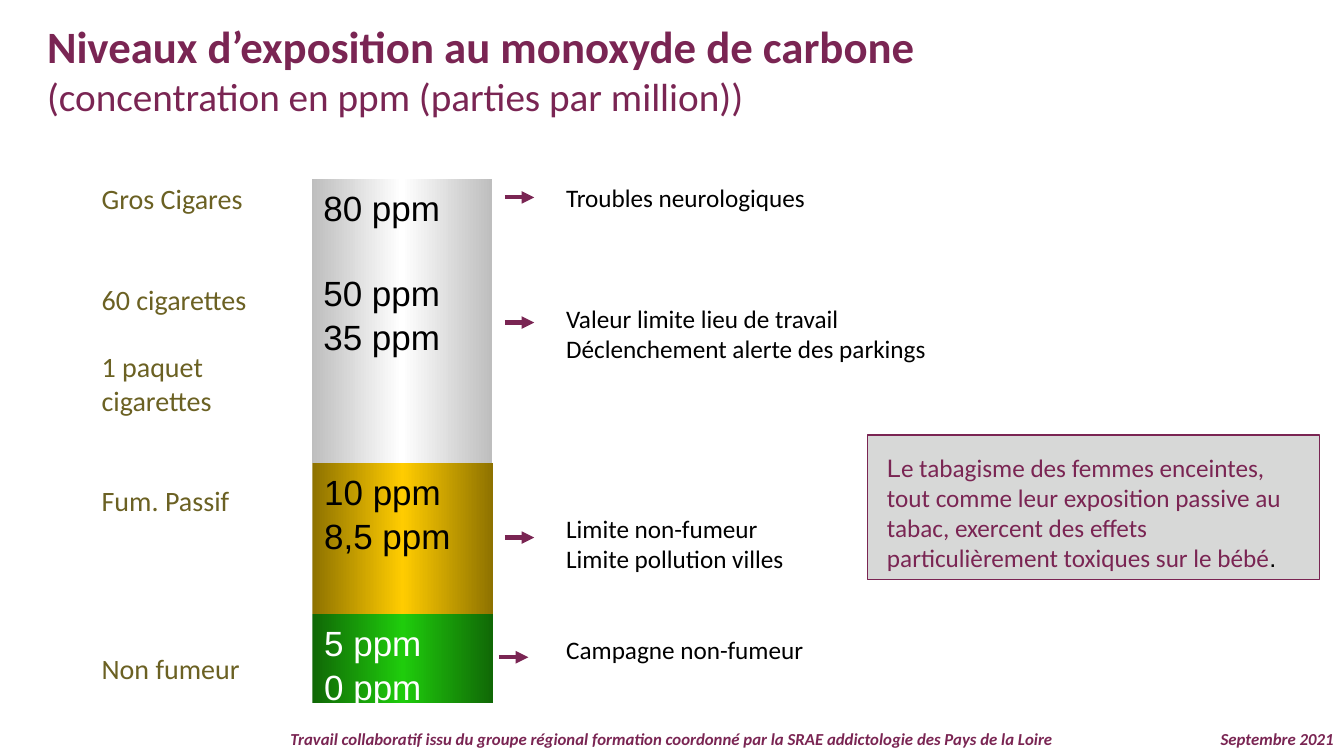
from copy import deepcopy

from lxml.etree import SubElement
from pptx import Presentation
from pptx.dml.color import RGBColor
from pptx.enum.shapes import MSO_CONNECTOR, MSO_SHAPE
from pptx.enum.text import MSO_ANCHOR, MSO_AUTO_SIZE, PP_ALIGN
from pptx.oxml.ns import qn
from pptx.util import Inches, Pt

COLUMNS, ROWS = 160, 90
BLANK_LINE = 1.2  # height of a skipped line, in font sizes


def cells(count):
    """Turn a number of grid cells (twelve to the inch) into a length."""
    return Inches(count / 12)


def rgb(colour):
    return RGBColor.from_string(colour)


def format_run(run, size, colour, font="Calibri", bold=False, italic=False):
    run.font.size, run.font.name = Pt(size), font
    run.font.bold, run.font.italic = bold, italic
    run.font.color.rgb = rgb(colour)


def write(frame, paragraphs, align=PP_ALIGN.LEFT, spacing=1.0,
          insets=(1.2, 0.6, 1.2, 0.6), plain_list=False, **style):
    """Fill a frame with (skipped lines, [(text, style changes), ...]) paragraphs."""
    frame.word_wrap, frame.auto_size = True, MSO_AUTO_SIZE.NONE
    frame.vertical_anchor = MSO_ANCHOR.TOP
    (frame.margin_left, frame.margin_top,
     frame.margin_right, frame.margin_bottom) = map(cells, insets)
    for index, (skipped, runs) in enumerate(paragraphs):
        paragraph = frame.add_paragraph() if index else frame.paragraphs[0]
        if plain_list:
            properties = paragraph._p.get_or_add_pPr()
            properties.set("marL", "0")
            properties.set("indent", "0")
            SubElement(properties, qn("a:buNone"))
        paragraph.alignment, paragraph.line_spacing = align, spacing
        paragraph.space_before = Pt(skipped * style["size"] * BLANK_LINE)
        for text, changes in runs:
            run = paragraph.add_run()
            run.text = text
            format_run(run, **{**style, **changes})


def lines(*entries):
    """Make paragraphs from texts, or from (skipped lines, text) pairs."""
    pairs = [(0, entry) if isinstance(entry, str) else entry for entry in entries]
    return [(skipped, [(text, {})]) for skipped, text in pairs]


class ExposureSlide:
    plum, olive, black, white = "7A2553", "6B6123", "000000", "FFFFFF"
    note_grey = "D7D8D7"

    def __init__(self, deck):
        self.slide = deck.slides.add_slide(deck.slide_layouts[1])
        self.shapes = self.slide.shapes

    def placeholder(self, index, left, top, width, height, paragraphs, **style):
        holder = self.slide.placeholders[index]
        holder.left, holder.top = cells(left), cells(top)
        holder.width, holder.height = cells(width), cells(height)
        write(holder.text_frame, paragraphs, **style)

    def text(self, left, top, width, height, paragraphs, **style):
        box = self.shapes.add_textbox(*map(cells, (left, top, width, height)))
        write(box.text_frame, paragraphs, **style)

    def rectangle(self, left, top, width, height, paragraphs, **style):
        box = self.shapes.add_shape(
            MSO_SHAPE.RECTANGLE, *map(cells, (left, top, width, height)))
        box.shadow.inherit = False
        write(box.text_frame, paragraphs, **style)
        return box

    def level(self, left, top, height, edge, middle, paragraphs, colour):
        bar = self.rectangle(left, top, 21.5, height, paragraphs, size=25, font="Arial",
                             colour=colour, spacing=1.04, insets=(1.4, 0.7, 1.4, 0.7))
        bar.line.fill.background()
        bar.fill.gradient()
        bar.fill.gradient_angle = 0
        stops = bar.element.spPr.find(".//" + qn("a:gsLst"))
        stops.append(deepcopy(stops[0]))
        for stop, shade, position in zip(
                bar.fill.gradient_stops, (edge, middle, edge), (0, 0.5, 1)):
            stop.color.rgb, stop.position = rgb(shade), position

    def note(self, left, top, width, height, paragraphs, **style):
        box = self.rectangle(left, top, width, height, paragraphs, **style)
        box.fill.solid()
        box.fill.fore_color.rgb = rgb(self.note_grey)
        box.line.color.rgb, box.line.width = rgb(self.plum), Pt(1)

    def arrow(self, left, top, length=3.5):
        arrow = self.shapes.add_connector(
            MSO_CONNECTOR.STRAIGHT, *map(cells, (left, top, left + length, top)))
        arrow.line.color.rgb, arrow.line.width = rgb(self.plum), Pt(3)
        SubElement(arrow.line._get_or_add_ln(), qn("a:tailEnd"), type="triangle")
        SubElement(arrow.element.spPr, qn("a:effectLst"))


def main():
    deck = Presentation()
    deck.slide_width, deck.slide_height = cells(COLUMNS), cells(ROWS)
    page = ExposureSlide(deck)

    page.placeholder(0, 4.4, 1.6, 128, 13.3, [
        (0, [("Niveaux d’exposition au monoxyde de carbone", {"bold": True})]),
        (0, [("(concentration en ppm (parties par million))", {"size": 28})]),
    ], size=32, colour=page.plum)

    page.placeholder(1, 10.9, 21, 23.5, 61.8, lines(
        "Gros Cigares", (2, "60 cigarettes"), (1, "1 paquet cigarettes"),
        (2, "Fum. Passif"), (4, "Non fumeur"),
    ), size=20, colour=page.olive, plain_list=True)

    level_top = 21.25
    for left, height, edge, middle, colour, values in (
        (37.1, 33.85, "BEBEBE", "FFFFFF", page.black, ("80 ppm", (1, "50 ppm"), "35 ppm")),
        (37.2, 18, "8E7200", "FFCC00", page.black, ("10 ppm", "8,5 ppm")),
        (37.2, 10.55, "106806", "1FCC0C", page.white, ("5 ppm", "0 ppm")),
    ):
        page.level(left, level_top, height, edge, middle, lines(*values), colour)
        level_top += height

    for left, top in ((60.1, 23.5), (60.1, 38.4), (60.1, 64), (59.4, 78.25)):
        page.arrow(left, top)

    page.text(66.2, 21.1, 48.4, 23, lines(
        "Troubles neurologiques", (3, "Valeur limite lieu de travail"),
        "Déclenchement alerte des parkings",
    ), size=18, colour=page.black)
    page.text(66.2, 60.5, 31.6, 19.4, lines(
        "Limite non-fumeur", "Limite pollution villes", (2, "Campagne non-fumeur"),
    ), size=18, colour=page.black)

    page.note(103.3, 51.8, 53.8, 17.2, [(0, [
        ("L", {"font": "Arial"}),
        ("e tabagisme des femmes enceintes, tout comme leur exposition passive au tabac, "
         "exercent des effets particulièrement toxiques sur le bébé", {}),
        (".", {"font": "Arial", "colour": page.black}),
    ])], size=18, colour=page.plum, insets=(2.3, 2, 2.3, 0))

    for left, width, align, words in (
        (0, COLUMNS, PP_ALIGN.CENTER, "Travail collaboratif issu du groupe régional formation "
         "coordonné par la SRAE addictologie des Pays de la Loire"),
        (138.2, 21.8, PP_ALIGN.RIGHT, "Septembre 2021"),
    ):
        page.text(left, 86.4, width, 3.6, lines(words), align=align, spacing=0.9,
                  size=12, colour=page.plum, bold=True, italic=True)

    deck.save("out.pptx")


if __name__ == "__main__":
    main()
